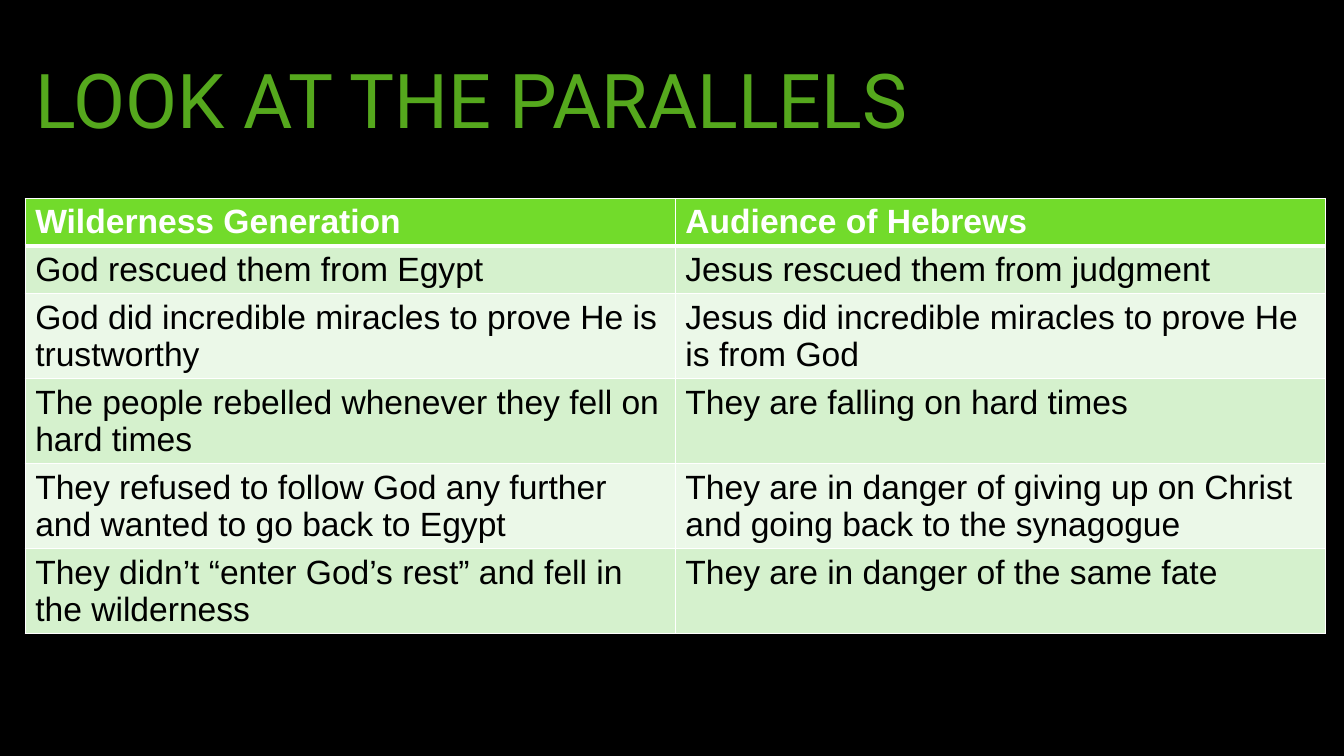
from lxml import etree
from pptx import Presentation
from pptx.dml.color import RGBColor
from pptx.enum.text import MSO_ANCHOR, MSO_AUTO_SIZE, PP_ALIGN
from pptx.oxml.ns import qn
from pptx.util import Pt

MIDDLE = MSO_ANCHOR.MIDDLE
NO_FIT = MSO_AUTO_SIZE.NONE
LEFT = PP_ALIGN.LEFT

COLORS = {
    "back": "000000", "title": "55A81D", "head": "72DB2B",
    "odd": "D5F1CD", "even": "EBF8E8", "white": "FFFFFF", "text": "000000",
}
TITLE = {"name": "Roboto", "size": Pt(54), "bold": False}
HEAD = {"name": "Arial", "size": Pt(24), "bold": True}
BODY = {**HEAD, "bold": False}

ROWS = [
    ("Wilderness Generation", "Audience of Hebrews"),
    ("God rescued them from Egypt", "Jesus rescued them from judgment"),
    ("God did incredible miracles to prove He is trustworthy",
     "Jesus did incredible miracles to prove He is from God"),
    ("The people rebelled whenever they fell on hard times",
     "They are falling on hard times"),
    ("They refused to follow God any further and wanted to go back to Egypt",
     "They are in danger of giving up on Christ and going back to the synagogue"),
    ("They didn’t “enter God’s rest” and fell in the wilderness",
     "They are in danger of the same fate"),
]
EDGE, WIDTH = 18, 928.8
ROW = 29.5


def style(font, form, color):
    for key, value in form.items():
        setattr(font, key, value)
    font.color.rgb = RGBColor.from_string(COLORS[color])


def border(cell, side, width):
    line = etree.SubElement(cell._tc.get_or_add_tcPr(), qn("a:" + side), w=str(Pt(width)))
    fill = etree.SubElement(line, qn("a:solidFill"))
    etree.SubElement(fill, qn("a:srgbClr"), val=COLORS["white"])


# Slide and background
deck = Presentation()
deck.slide_width, deck.slide_height = Pt(960), Pt(540)
slide = deck.slides.add_slide(deck.slide_layouts[5])
back = slide.background.fill
back.solid()
back.fore_color.rgb = RGBColor.from_string(COLORS["back"])

# Title
title = slide.shapes.title
title.left, title.top, title.width, title.height = Pt(EDGE), Pt(16), Pt(WIDTH), Pt(116.6)
frame = title.text_frame
frame.text = "LOOK AT THE PARALLELS"
frame.auto_size = NO_FIT
frame.vertical_anchor = MIDDLE
para = frame.paragraphs[0]
para.alignment = LEFT
para.line_spacing = 0.9
style(para.runs[0].font, TITLE, "title")

# Table: rows grow to fit their text
table = slide.shapes.add_table(
    len(ROWS), 2, Pt(EDGE), Pt(141.8), Pt(WIDTH), Pt(ROW * len(ROWS))).table
for r, row in enumerate(ROWS):
    table.rows[r].height = Pt(ROW)
    shade = "head" if r == 0 else "odd" if r % 2 else "even"
    for c, text in enumerate(row):
        cell = table.cell(r, c)
        cell.text = text
        form, color = (HEAD, "white") if r == 0 else (BODY, "text")
        style(cell.text_frame.paragraphs[0].runs[0].font, form, color)
        border(cell, "lnL", 1)
        border(cell, "lnR", 1)
        border(cell, "lnT", 3 if r == 1 else 1)
        border(cell, "lnB", 3 if r == 0 else 1)
        cell.fill.solid()
        cell.fill.fore_color.rgb = RGBColor.from_string(COLORS[shade])

deck.save("out.pptx")
